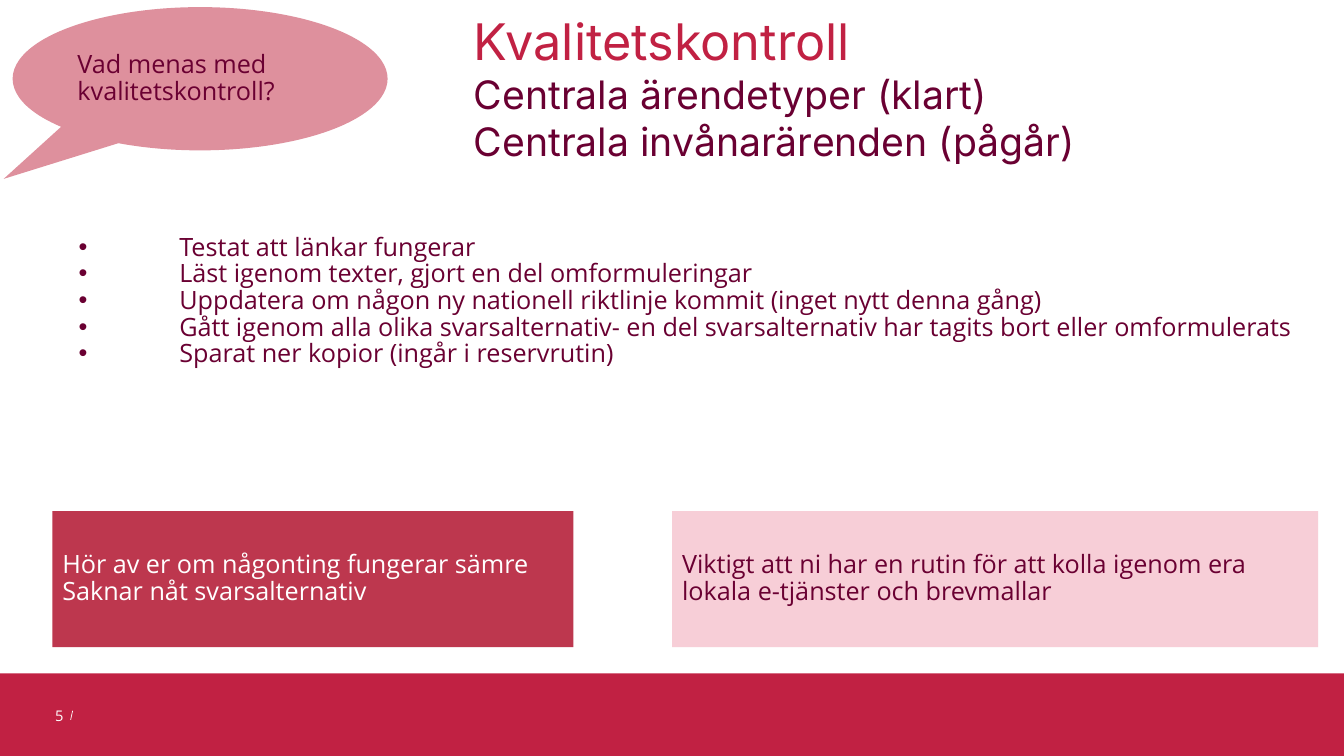
from dataclasses import dataclass

from lxml.etree import SubElement
from pptx import Presentation
from pptx.dml.color import RGBColor
from pptx.enum.shapes import MSO_CONNECTOR, MSO_SHAPE
from pptx.enum.text import MSO_ANCHOR as ANCHOR, PP_ALIGN as ALIGN
from pptx.oxml.ns import qn
from pptx.util import Cm, Pt

COLORS = {
    "red": "C12143",
    "plum": "6A0032",
    "rose": "DE909D",
    "crimson": "BD374E",
    "pink": "F7CED7",
    "white": "FFFFFF",
}
BODY, HEADING = "Open Sans", "Inter"
BULLET_INDENT = Cm(2.54)


@dataclass
class Line:
    text: str
    size: float = 18
    color: str = "plum"
    font: str = BODY


@dataclass
class Panel:
    kind: MSO_SHAPE
    box: tuple[float, float, float, float]
    fill: str
    lines: list[Line]
    spacing: float = 0.88
    adjustments: tuple[float, ...] = ()


def rgb(name: str) -> RGBColor:
    return RGBColor.from_string(COLORS[name])


def write(tf, lines: list[Line], spacing: float = 1.0, align=ALIGN.LEFT,
          bullet: bool = False) -> None:
    tf.word_wrap = True
    for i, line in enumerate(lines):
        p = tf.add_paragraph() if i else tf.paragraphs[0]
        p.text = line.text
        p.alignment = align
        p.line_spacing = spacing
        if bullet:
            pPr = p._p.get_or_add_pPr()
            pPr.set("marL", str(BULLET_INDENT))
            pPr.set("indent", str(-BULLET_INDENT))
            SubElement(pPr, qn("a:buFont")).set("typeface", "Arial")
            SubElement(pPr, qn("a:buChar")).set("char", "•")
        for r in p.runs:
            r.font.size = Pt(line.size)
            r.font.name = line.font
            r.font.color.rgb = rgb(line.color)


def add_panel(s, panel: Panel) -> None:
    sp = s.shapes.add_shape(panel.kind, *map(Cm, panel.box))
    sp.shadow.inherit = False
    sp.fill.solid()
    sp.fill.fore_color.rgb = rgb(panel.fill)
    sp.line.fill.background()
    for i, value in enumerate(panel.adjustments):
        sp.adjustments[i] = value
    if panel.lines:
        sp.text_frame.vertical_anchor = ANCHOR.MIDDLE
        write(sp.text_frame, panel.lines, panel.spacing)


def add_text(s, box: tuple[float, float, float, float], inset: float = 0):
    tf = s.shapes.add_textbox(*map(Cm, box)).text_frame
    tf.margin_left = tf.margin_right = Cm(inset)
    tf.margin_top = tf.margin_bottom = 0
    return tf


FOOTER = Panel(MSO_SHAPE.RECTANGLE, (0, 16.97, 33.87, 2.08), "red", [])
TITLE = [
    Line("Kvalitetskontroll", 36, "red", HEADING),
    Line("Centrala ärendetyper (klart)", 28, "plum", HEADING),
    Line("Centrala invånarärenden (pågår)", 28, "plum", HEADING),
]
CHECKS = [
    Line("Testat att länkar fungerar"),
    Line("Läst igenom texter, gjort en del omformuleringar"),
    Line("Uppdatera om någon ny nationell riktlinje kommit (inget nytt denna gång)"),
    Line("Gått igenom alla olika svarsalternativ- en del svarsalternativ "
         "har tagits bort eller omformulerats"),
    Line("Sparat ner kopior (ingår i reservrutin)"),
]
PANELS = [
    Panel(MSO_SHAPE.OVAL_CALLOUT, (0.32, 0.18, 9.45, 3.61), "rose",
          [Line("Vad menas med kvalitetskontroll?")], 0.9, (-0.524, 0.699)),
    Panel(MSO_SHAPE.RECTANGLE, (1.32, 12.88, 13.13, 3.43), "crimson",
          [Line("Hör av er om någonting fungerar sämre", color="white"),
           Line("Saknar nåt svarsalternativ", color="white")]),
    Panel(MSO_SHAPE.RECTANGLE, (16.94, 12.88, 16.28, 3.43), "pink",
          [Line("Viktigt att ni har en rutin för att kolla igenom era "
                "lokala e-tjänster och brevmallar")]),
]


def main() -> None:
    prs = Presentation()
    prs.slide_width, prs.slide_height = Cm(33.87), Cm(19.05)
    s = prs.slides.add_slide(prs.slide_layouts[6])

    # Footer band with slide number and slash
    add_panel(s, FOOTER)
    slash = s.shapes.add_connector(
        MSO_CONNECTOR.STRAIGHT, Cm(1.83), Cm(17.91), Cm(1.78), Cm(18.14))
    slash.line.color.rgb = rgb("white")
    slash.line.width = Pt(0.5)
    SubElement(slash._element.spPr, qn("a:effectLst"))
    number = add_text(s, (0.76, 17.53, 1.09, 1.02), 0.25)
    number.vertical_anchor = ANCHOR.MIDDLE
    write(number, [Line("5", 10.5, "white")], align=ALIGN.RIGHT)

    # Checklist and title
    write(add_text(s, (1.98, 5.92, 31.24, 4.04)), CHECKS, 0.88, bullet=True)
    write(add_text(s, (11.94, 0.25, 19.15, 4.93)), TITLE)

    # Callout and message boxes
    for panel in PANELS:
        add_panel(s, panel)

    prs.save("out.pptx")


if __name__ == "__main__":
    main()
